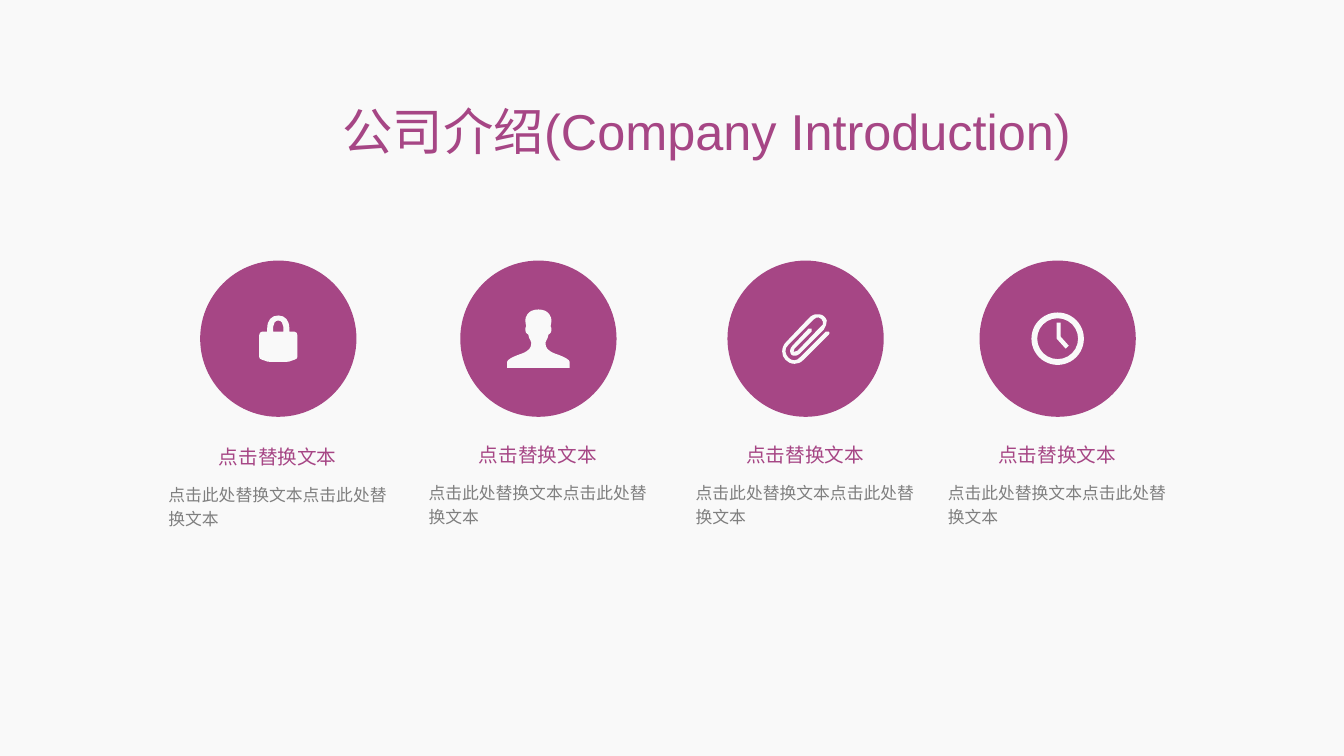
from pptx import Presentation
from pptx.dml.color import RGBColor
from pptx.enum.shapes import MSO_SHAPE
from pptx.enum.text import MSO_ANCHOR, PP_ALIGN
from pptx.oxml.ns import qn
from pptx.util import Inches, Pt

COLOURS = {"background": "F9F9F9", "accent": "A64685", "body": "7F7F7F"}
CIRCLE_SIZE = 1.55
CIRCLE_CENTRE_Y = 3.36

# Icon outlines: hundredths of an inch from the circle's centre
LOCK = """M -5 -12 C -5 -15 -3 -18 0 -18 C 3 -18 5 -15 5 -12 L 5 -7 L -5 -7
M 16 -7 L 11 -7 L 11 -10 C 11 -18 7 -23 0 -23 C -7 -23 -11 -18 -11 -10
L -11 -7 L -16 -7 C -18 -7 -19 -5 -19 -3 L -19 18 C -19 19 -18 21 -16 21
L -13 22 C -12 23 -9 23 -8 23 L 8 23 C 9 23 12 23 13 22 L 16 21
C 18 21 19 19 19 18 L 19 -3 C 19 -5 18 -7 16 -7"""
PERSON = """M 17 15 C 9 12 7 9 7 4 C 7 1 9 2 10 -4 C 11 -6 13 -4 13 -10
C 13 -12 12 -12 12 -12 C 12 -12 13 -16 13 -18 C 13 -21 11 -29 0 -29
C -11 -29 -13 -21 -13 -18 C -13 -16 -12 -12 -12 -12 C -12 -12 -13 -12 -13 -10
C -13 -4 -11 -6 -10 -4 C -9 2 -7 1 -7 4 C -7 9 -9 12 -17 15
C -26 18 -31 21 -31 23 L -31 29 L 31 29 L 31 23 C 31 21 26 18 17 15"""
PAPERCLIP = """M -11 25 C -15 25 -18 23 -20 21 C -24 17 -25 9 -19 3
C -16 0 -2 -15 5 -22 C 8 -24 11 -25 14 -24 C 17 -24 20 -21 21 -18
C 21 -15 20 -12 18 -9 L -6 15 C -7 16 -9 17 -10 17 C -12 17 -13 17 -14 16
C -16 14 -16 10 -13 7 L 3 -10 C 4 -10 5 -10 6 -10 C 6 -9 6 -8 6 -7
L -11 10 C -12 11 -12 12 -12 13 C -12 13 -11 13 -11 13 C -10 13 -9 13 -8 12
L 15 -12 C 17 -13 18 -15 17 -17 C 17 -19 15 -20 13 -21 C 11 -21 10 -21 8 -19
C 1 -12 -13 2 -17 6 C -22 10 -20 16 -17 19 C -14 22 -9 23 -5 18
L 20 -7 C 21 -7 22 -7 23 -7 C 24 -6 24 -5 23 -4 L -2 21 C -5 24 -8 25 -11 25"""
CLOCK_HANDS = "M 3 -16 L -1 -16 L -1 0 L 8 10 L 11 7 L 3 -2"

# Centre of each column, drop of its text, icon outline, whether a ring is drawn
COLUMNS = [
    (2.76, 0.02, LOCK, False),
    (5.34, 0, PERSON, False),
    (7.99, 0, PAPERCLIP, False),
    (10.49, 0, CLOCK_HANDS, True),
]

TITLE = {
    "font": {"size": Pt(36), "name": "Arial"},
    "paragraph": {"alignment": PP_ALIGN.CENTER, "line_spacing": Pt(48)},
    "frame": {"vertical_anchor": MSO_ANCHOR.MIDDLE},
    "colour": "accent",
}
NO_MARGINS = {f"margin_{side}": 0 for side in ("left", "top", "right", "bottom")}
HEADING = {
    "font": {"size": Pt(14), "name": "Arial"},
    "paragraph": {"alignment": PP_ALIGN.CENTER, "line_spacing": 0.9,
                  "space_before": Pt(10)},
    "frame": NO_MARGINS,
    "colour": "accent",
}
BODY = {
    "font": {"size": Pt(12), "name": "Arial"},
    "paragraph": {"line_spacing": Pt(17), "space_before": Pt(10)},
    "frame": NO_MARGINS,
    "colour": "body",
}


def colour(name):
    return RGBColor.from_string(COLOURS[name])


def set_values(target, values):
    for name, value in values.items():
        setattr(target, name, value)


def add_text(page, box, text, style):
    frame = page.shapes.add_textbox(*map(Inches, box)).text_frame
    frame.word_wrap = True
    set_values(frame, style["frame"])
    para = frame.paragraphs[0]
    set_values(para, style["paragraph"])
    span = para.add_run()
    span.text = text
    set_values(span.font, style["font"])
    span.font.color.rgb = colour(style["colour"])


def paint(shape, name):
    shape.shadow.inherit = False
    shape.fill.solid()
    shape.fill.fore_color.rgb = colour(name)
    shape.line.fill.background()


def add_round(page, kind, centre_x, centre_y, size, name):
    box = (centre_x - size / 2, centre_y - size / 2, size, size)
    shape = page.shapes.add_shape(kind, *map(Inches, box))
    paint(shape, name)
    return shape


def read_outline(outline):
    """Return the contours as lists of points, and the order of L and C steps."""
    contours, steps = [], []
    tokens = iter(outline.split())
    for command in tokens:
        count = 3 if command == "C" else 1
        points = [(int(next(tokens)), int(next(tokens))) for _ in range(count)]
        if command == "M":
            contours.append(points)
        else:
            contours[-1].extend(points)
            steps.append(command)
    return contours, steps


def bend_lines(shape, steps):
    """Join each three lines of a C step into one Bezier curve."""
    lines = iter(shape._element.xpath(".//a:path/a:lnTo"))
    for step in steps:
        line = next(lines)
        if step == "C":
            line.tag = qn("a:cubicBezTo")
            for extra in (next(lines), next(lines)):
                line.append(extra[0])
                extra.getparent().remove(extra)


def add_icon(page, centre_x, centre_y, outline):
    contours, steps = read_outline(outline)
    builder = None
    for contour in contours:
        points = [(Inches(centre_x + x / 100), Inches(centre_y + y / 100))
                  for x, y in contour]
        if builder is None:
            builder = page.shapes.build_freeform(*points[0])
        else:
            builder.move_to(*points[0])
        builder.add_line_segments(points[1:], close=True)
    icon = builder.convert_to_shape()
    bend_lines(icon, steps)
    paint(icon, "background")


def add_column(page, centre_x, text_drop, outline, has_ring):
    # Circle and icon
    centre_y = CIRCLE_CENTRE_Y
    add_round(page, MSO_SHAPE.OVAL, centre_x, centre_y, CIRCLE_SIZE, "accent")
    if has_ring:
        ring = add_round(page, MSO_SHAPE.DONUT, centre_x, centre_y, 0.52, "background")
        ring.adjustments[0] = 0.11
    add_icon(page, centre_x, centre_y, outline)

    # Heading and description
    add_text(page, (centre_x - 1.05, 4.42 + text_drop, 2.09, 0.32),
             "点击替换文本", HEADING)
    add_text(page, (centre_x - 1.09, 4.75 + text_drop, 2.18, 1.06),
             "点击此处替换文本点击此处替换文本", BODY)


def main():
    deck = Presentation()
    deck.slide_width, deck.slide_height = Inches(13.33), Inches(7.5)
    page = deck.slides.add_slide(deck.slide_layouts[6])
    page.background.fill.solid()
    page.background.fill.fore_color.rgb = colour("background")

    add_text(page, (2.01, 0.96, 10, 0.59), "公司介绍(Company Introduction)", TITLE)
    for column in COLUMNS:
        add_column(page, *column)
    deck.save("out.pptx")


if __name__ == "__main__":
    main()
